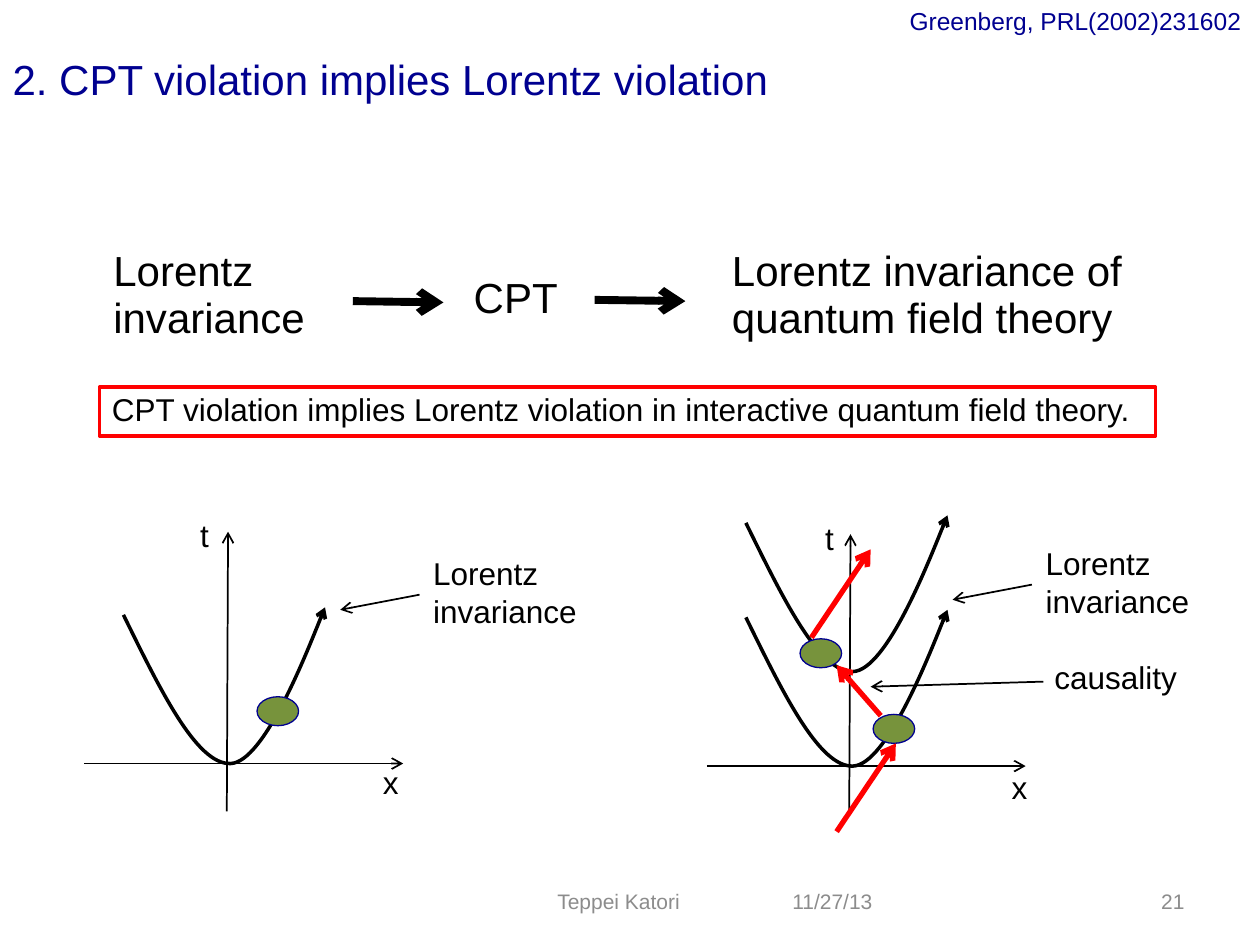
from pptx import Presentation, util as u
from pptx.dml.color import RGBColor
from pptx.enum import shapes, text
from pptx.oxml import parse_xml
from pptx.oxml.ns import nsdecls, qn

COLORS = {"navy": "000090", "black": "000000", "gray": "8C8C8C",
          "red": "FF0000", "green": "77933C", "white": "FFFFFF"}
COLUMNS, ROWS = 10, 7.5
UNIT = u.Inches(1)
INSETS = ("margin_left", "margin_top", "margin_right", "margin_bottom")


def grid(*cells):
    """Turn grid columns and rows into lengths."""
    return [u.Emu(round(cell * UNIT)) for cell in cells]


def color(name):
    """Look up a colour of the palette."""
    return RGBColor.from_string(COLORS[name])


def apply(target, **values):
    """Set every given attribute on the target."""
    for name, value in values.items():
        setattr(target, name, value)


def write(box, words, size, ink="black", align="LEFT", anchor="TOP",
          spacing=None, inset=True, wrap=True):
    """Fill a box with one formatted paragraph."""
    frame = box.text_frame
    margins = (0.1, 0.05, 0.1, 0.05) if inset else (0, 0, 0, 0)
    apply(frame, word_wrap=wrap, auto_size=text.MSO_AUTO_SIZE.NONE,
          vertical_anchor=text.MSO_ANCHOR[anchor], **dict(zip(INSETS, grid(*margins))))
    para = frame.paragraphs[0]
    apply(para, alignment=text.PP_ALIGN[align], line_spacing=spacing)
    span = para.add_run()
    span.text = words
    apply(span.font, name="Arial", size=u.Pt(size))
    span.font.color.rgb = color(ink)


def add_label(page, place, words, size=18, **options):
    """Add a text box."""
    write(page.shapes.add_textbox(*grid(*place)), words, size, **options)


def stroke(shape, ink, width, arrow=False):
    """Style an outline, with an open arrowhead if wanted."""
    shape.line.color.rgb = color(ink)
    shape.line.width = u.Pt(width)
    if arrow:
        shape.line._get_or_add_ln().append(
            parse_xml(f'<a:tailEnd {nsdecls("a")} type="arrow"/>'))


def add_arrow(page, ends, ink="black", width=1):
    """Add a straight arrow."""
    arrow = page.shapes.add_connector(shapes.MSO_CONNECTOR.STRAIGHT, *grid(*ends))
    stroke(arrow, ink, width, arrow=True)
    arrow._element.spPr.append(parse_xml(f'<a:effectLst {nsdecls("a")}/>'))


def add_shape(page, kind, place, fill, ink, width):
    """Add a filled and outlined preset shape."""
    shape = page.shapes.add_shape(shapes.MSO_SHAPE[kind], *grid(*place))
    shape.shadow.inherit = False
    shape.fill.solid()
    shape.fill.fore_color.rgb = color(fill)
    stroke(shape, ink, width)
    return shape


def add_vertex(page, left, top):
    """Add an interaction vertex."""
    add_shape(page, "OVAL", (left, top, 0.33, 0.23), "green", "navy", 0.75)


def add_hyperbola(page, left, top):
    """Add a mass-shell curve made of two Bezier arcs."""
    offsets = [(0, 0.06), (0.29, 0.65), (0.58, 1.25), (0.85, 1.24),
               (1.12, 1.23), (1.6, 0), (1.6, 0)]
    start, *others = [grid(left + x, top + y) for x, y in offsets]
    builder = page.shapes.build_freeform(*start)
    builder.add_line_segments(others, close=False)
    curve = builder.convert_to_shape()
    path = next(curve._element.iter(qn("a:path")))
    lines = path.findall(qn("a:lnTo"))
    for first in range(0, len(lines), 3):
        arc = parse_xml(f'<a:cubicBezTo {nsdecls("a")}/>')
        for line in lines[first:first + 3]:
            arc.append(line[0])
            path.remove(line)
        path.append(arc)
    curve.shadow.inherit = False
    curve.fill.background()
    stroke(curve, "black", 2, arrow=True)


def add_diagram(page, left, base):
    """Add the t and x axes with the lower curve."""
    add_hyperbola(page, left + 0.31, base - 1.24)
    add_arrow(page, (left, base, left + 2.53, base))
    add_arrow(page, (left + 1.13, base + 0.38, left + 1.14, base - 1.84))


def add_heading(page):
    """Fill the title and the reference."""
    title = page.shapes.title
    apply(title, **dict(zip(("left", "top", "width", "height"), grid(0, 0, COLUMNS, 1.25))))
    write(title, "2. CPT violation implies Lorentz violation", 24, "navy", anchor="MIDDLE")
    add_label(page, (7.12, 0, 2.89, 0.34), "Greenberg, PRL(2002)231602", 14, ink="navy")


def add_argument(page):
    """Add the chain of implications and its boxed conclusion."""
    for place, words in [((0.9, 1.98, 1.66, 0.76), "Lorentz invariance"),
                         ((3.76, 2.19, 1.02, 0.38), "CPT"),
                         ((5.81, 1.98, 3.3, 0.76), "Lorentz invariance of quantum field theory")]:
        add_label(page, place, words, 24, spacing=0.93, inset=False)
    for left, top in [(2.8, 2.39), (4.72, 2.38)]:
        add_arrow(page, (left, top, left + 0.72, top + 0.01), width=4.5)
    box = add_shape(page, "RECTANGLE", (0.79, 3.07, 8.38, 0.39), "white", "red", 2)
    write(box, "CPT violation implies Lorentz violation in interactive quantum field theory.",
          18, spacing=0.93)


def add_diagrams(page):
    """Add both spacetime diagrams with their notes."""
    add_diagram(page, 0.67, 6.06)
    add_vertex(page, 2.04, 5.53)
    add_diagram(page, 5.61, 6.08)
    add_vertex(page, 6.93, 5.67)
    add_hyperbola(page, 5.92, 4.09)
    add_vertex(page, 6.35, 5.07)
    for ends in [(6.99, 5.68, 6.64, 5.28), (6.44, 5.06, 6.91, 4.36), (6.64, 6.6, 7.11, 5.9)]:
        add_arrow(page, ends, "red", 3)
    for left, top, words in [(1.49, 4.05, "t"), (2.94, 6.01, "x"),
                             (6.45, 4.07, "t"), (7.93, 6.05, "x")]:
        add_label(page, (left, top, 0.33, 0.4), words, wrap=False)
    for left, top in [(3.34, 4.35), (8.2, 4.27)]:
        add_label(page, (left, top, 1.37, 0.71), "Lorentz invariance")
        add_arrow(page, (left - 0.01, top + 0.37, left - 0.64, top + 0.49))
    add_label(page, (8.27, 5.17, 1.23, 0.4), "causality")
    add_arrow(page, (8.28, 5.41, 6.91, 5.45))


def add_footer(page):
    """Add the author, date and page number."""
    for left, width, words, align in [(3.82, 2.18, "Teppei Katori", "CENTER"),
                                      (6.19, 1.52, "11/27/13", "LEFT"),
                                      (7.82, 1.68, "21", "RIGHT")]:
        add_label(page, (left, 6.95, width, 0.4), words, 12, ink="gray",
                  align=align, anchor="MIDDLE")


def main():
    """Build and save the slide."""
    deck = Presentation()
    deck.slide_width, deck.slide_height = grid(COLUMNS, ROWS)
    page = deck.slides.add_slide(deck.slide_layouts.get_by_name("Title Only"))
    add_heading(page)
    add_argument(page)
    add_diagrams(page)
    add_footer(page)
    deck.save("out.pptx")


if __name__ == "__main__":
    main()
